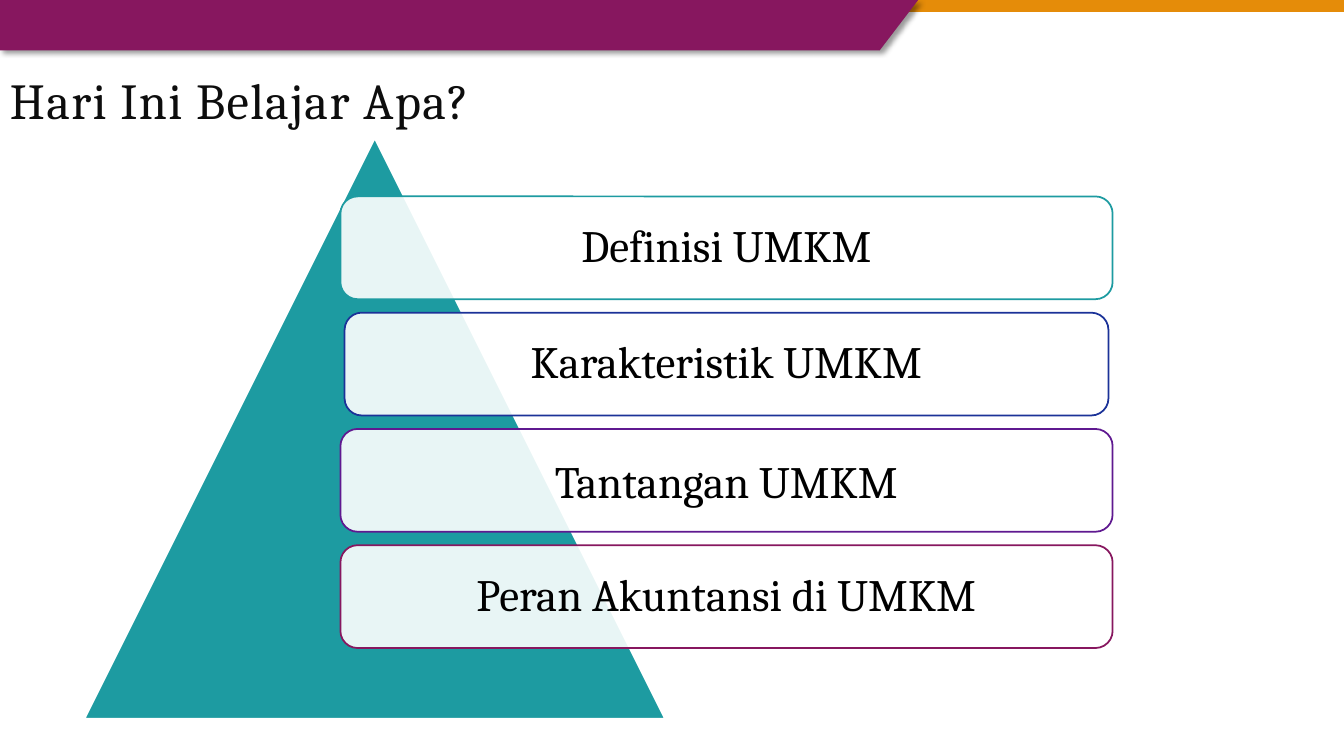
from dataclasses import dataclass

from lxml import etree
from pptx import Presentation, util as u
from pptx.dml.color import RGBColor
from pptx.enum import shapes, text
from pptx.oxml.ns import qn
from pptx.shapes.autoshape import Shape

FONT = "Cambria"
WIDE, HIGH = 33.87, 19.05
KIND = shapes.MSO_SHAPE


@dataclass
class Topic:
    label: str
    line: str
    width: float = 19.46
    gap: float = 0.9


TOPICS = [
    Topic("Definisi UMKM", "1D9BA1"),
    Topic("Karakteristik UMKM", "1B3298", width=19.25),
    Topic("Tantangan UMKM", "5F1990", gap=1.0),
    Topic("Peran Akuntansi di UMKM", "87175F"),
]
MID, TOP, STEP, TALL = 18.31, 4.95, 2.93, 2.59


def color(code: str) -> RGBColor:
    return RGBColor.from_string(code)


def paint(shape: Shape, fill: str, line: str = "", alpha: int = 100) -> None:
    shape.fill.solid()
    shape.fill.fore_color.rgb = color(fill)
    if alpha < 100:
        tint = shape._element.spPr.find(qn("a:solidFill"))[0]
        etree.SubElement(tint, qn("a:alpha"), val=str(alpha * 1000))
    if line:
        shape.line.color.rgb = color(line)
        shape.line.width = u.Pt(1.25)
    else:
        shape.line.fill.background()
    shape.shadow.inherit = False


def draw(kind: KIND, x: float, y: float, w: float, h: float,
         fill: str, line: str = "", alpha: int = 100) -> Shape:
    shape = slide.shapes.add_shape(kind, u.Cm(x), u.Cm(y), u.Cm(w), u.Cm(h))
    paint(shape, fill, line, alpha)
    return shape


def write(shape: Shape, words: str, *, size: int, ink: str = "000000",
          align: text.PP_ALIGN = text.PP_ALIGN.CENTER, gap: float = 1.0,
          track: int = 0, inset: float = 0.25) -> None:
    frame = shape.text_frame
    frame.word_wrap = True
    frame.vertical_anchor = text.MSO_ANCHOR.MIDDLE
    frame.margin_left = frame.margin_right = u.Cm(inset)
    para = frame.paragraphs[0]
    para.alignment = align
    para.line_spacing = gap
    run = para.add_run()
    run.text = words
    run.font.name = FONT
    run.font.size = u.Pt(size)
    run.font.color.rgb = color(ink)
    if track:
        run._r.get_or_add_rPr().set("spc", str(track * 100))


def cast(shape: Shape) -> None:
    """Give the shape a soft shadow to the lower right."""
    glow = etree.SubElement(
        shape._element.spPr.find(qn("a:effectLst")), qn("a:outerShdw"),
        blurRad=str(u.Pt(4)), dist=str(u.Pt(3)), dir=str(45 * 60000),
        algn="tl", rotWithShape="0")
    tint = etree.SubElement(glow, qn("a:srgbClr"), val="000000")
    etree.SubElement(tint, qn("a:alpha"), val="40000")


deck = Presentation()
deck.slide_width, deck.slide_height = u.Cm(WIDE), u.Cm(HIGH)
slide = deck.slides.add_slide(deck.slide_layouts[6])

# Header bands
draw(KIND.RECTANGLE, 0, 0, WIDE, 0.3, "E58C09")
edge = [(23.14, 0), (22.17, 1.27), (0, 1.27)]
pen = slide.shapes.build_freeform(0, 0)
pen.add_line_segments([(u.Cm(x), u.Cm(y)) for x, y in edge], close=True)
band = pen.convert_to_shape()
paint(band, "87175F")
cast(band)

# Title
title = slide.shapes.add_textbox(0, u.Cm(1.52), u.Cm(30.02), u.Cm(1.96))
write(title, "Hari Ini Belajar Apa?", size=36, ink="0D0D0D",
      align=text.PP_ALIGN.LEFT, track=1)

# Pyramid with its topics
draw(KIND.ISOSCELES_TRIANGLE, 2.13, 3.48, 14.63, 14.63, "1D9BA1", "FFFFFF")
for row, topic in enumerate(TOPICS):
    box = draw(KIND.ROUNDED_RECTANGLE, MID - topic.width / 2, TOP + row * STEP,
               topic.width, TALL, "FFFFFF", topic.line, alpha=90)
    write(box, topic.label, size=32, gap=topic.gap, inset=0.33)

deck.save("out.pptx")
